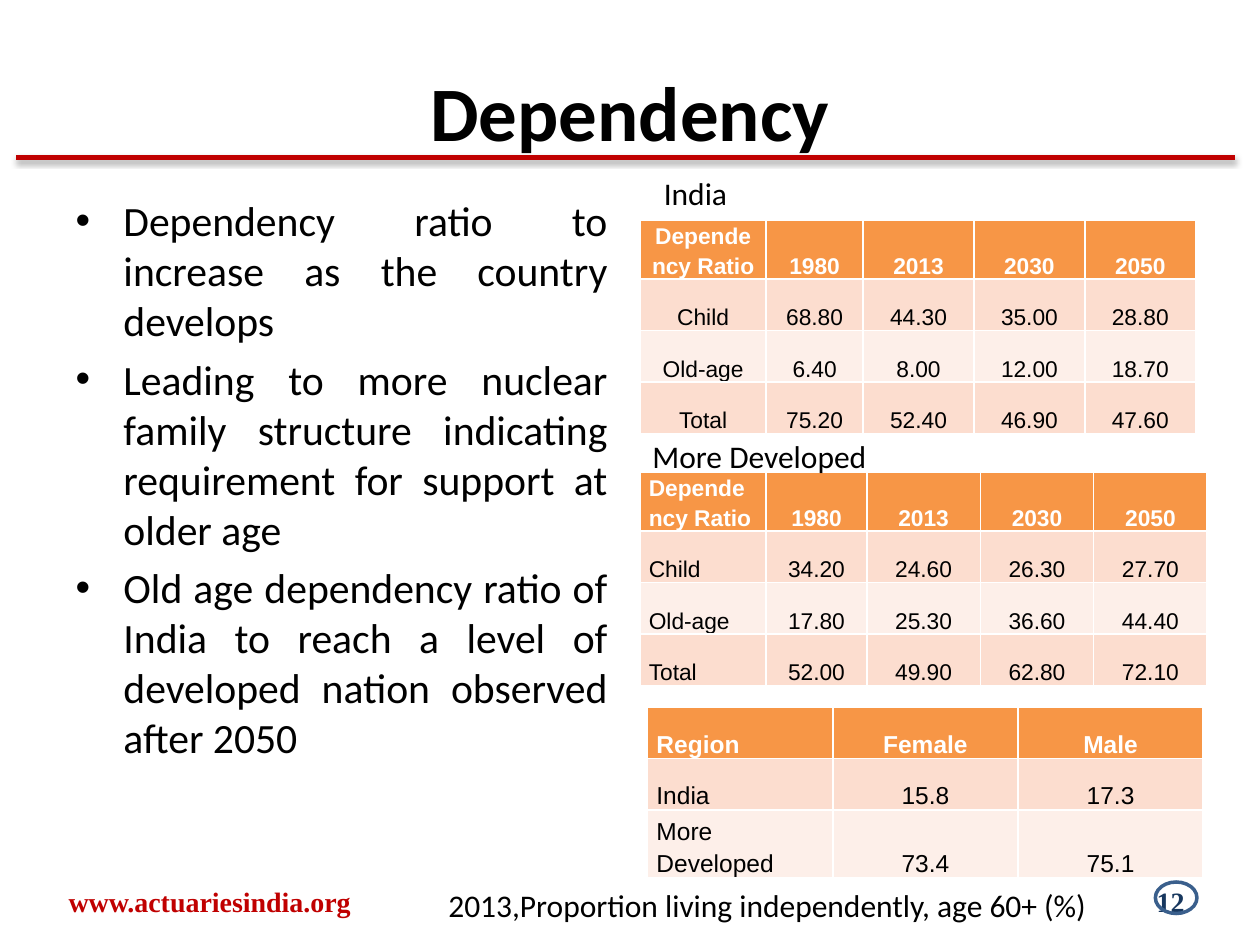
from lxml import etree
from pptx import Presentation
from pptx.dml.color import RGBColor
from pptx.enum.shapes import MSO_CONNECTOR, MSO_SHAPE
from pptx.enum.text import MSO_ANCHOR, MSO_AUTO_SIZE, PP_ALIGN
from pptx.oxml import parse_xml
from pptx.oxml.ns import nsdecls, qn
from pptx.util import Inches, Pt

LEFT, CENTER, RIGHT, JUSTIFY = (
    PP_ALIGN.LEFT, PP_ALIGN.CENTER, PP_ALIGN.RIGHT, PP_ALIGN.JUSTIFY)
TOP, MIDDLE, BOTTOM = MSO_ANCHOR.TOP, MSO_ANCHOR.MIDDLE, MSO_ANCHOR.BOTTOM

BLACK = RGBColor(0x00, 0x00, 0x00)
WHITE = RGBColor(0xFF, 0xFF, 0xFF)
RED = RGBColor(0xC0, 0x00, 0x00)
NAVY = RGBColor(0x17, 0x37, 0x5E)
RING_BLUE = RGBColor(0x3A, 0x5F, 0x8C)
ORANGE = RGBColor(0xF7, 0x96, 0x46)
BANDS = (RGBColor(0xFC, 0xDD, 0xCF), RGBColor(0xFD, 0xEF, 0xE9))

POINTS = [
    "Dependency ratio to increase as the country develops",
    "Leading to more nuclear family structure indicating requirement "
    "for support at older age",
    "Old age dependency ratio of India to reach a level of developed nation "
    "observed after 2050",
]
RATIO_HEADER = ["Dependency Ratio", "1980", "2013", "2030", "2050"]
INDIA_RATIOS = [
    RATIO_HEADER,
    ["Child", "68.80", "44.30", "35.00", "28.80"],
    ["Old-age", "6.40", "8.00", "12.00", "18.70"],
    ["Total", "75.20", "52.40", "46.90", "47.60"],
]
DEVELOPED_RATIOS = [
    RATIO_HEADER,
    ["Child", "34.20", "24.60", "26.30", "27.70"],
    ["Old-age", "17.80", "25.30", "36.60", "44.40"],
    ["Total", "52.00", "49.90", "62.80", "72.10"],
]
LIVING_ALONE = [
    ["Region", "Female", "Male"],
    ["India", "15.8", "17.3"],
    ["More Developed", "73.4", "75.1"],
]


def inches(*lengths):
    return [Inches(length) for length in lengths]


def write(paragraph, text, size=18, font="Calibri", color=BLACK, bold=False,
          align=LEFT, spacing=None):
    paragraph.alignment = align
    if spacing:
        paragraph.line_spacing = spacing
    run = paragraph.add_run()
    run.text = text
    run.font.size = Pt(size)
    run.font.name = font
    run.font.bold = bold
    run.font.color.rgb = color


def place(placeholder, box):
    placeholder.left, placeholder.top, placeholder.width, placeholder.height = inches(*box)
    placeholder.text_frame.auto_size = MSO_AUTO_SIZE.NONE
    return placeholder.text_frame


def add_label(slide, box, text, anchor=TOP, **text_format):
    frame = slide.shapes.add_textbox(*inches(*box)).text_frame
    frame.word_wrap = True
    frame.vertical_anchor = anchor
    write(frame.paragraphs[0], text, **text_format)


def add_title(slide, box, text):
    frame = place(slide.shapes.title, box)
    frame.vertical_anchor = MIDDLE
    write(frame.paragraphs[0], text, size=44, bold=True, align=CENTER)


def add_rule(slide, left, right, y):
    rule = slide.shapes.add_connector(
        MSO_CONNECTOR.STRAIGHT, *inches(left, y, right, y))
    rule.line.color.rgb = RED
    rule.line.width = Pt(3)
    rule._element.spPr.append(parse_xml(
        f'<a:effectLst {nsdecls("a")}>'
        f'<a:outerShdw blurRad="{Pt(3.1)}" dist="{Pt(1.6)}" dir="5400000" rotWithShape="0">'
        '<a:srgbClr val="000000"><a:alpha val="38000"/></a:srgbClr>'
        '</a:outerShdw></a:effectLst>'))


def add_points(slide, box, points):
    frame = place(slide.placeholders[1], box)
    for i, point in enumerate(points):
        paragraph = frame.paragraphs[0] if i == 0 else frame.add_paragraph()
        properties = paragraph._p.get_or_add_pPr()
        properties.set("marL", str(Inches(0.38)))
        properties.set("indent", str(Inches(-0.38)))
        etree.SubElement(properties, qn("a:buChar"), char="•")
        paragraph.space_before = Pt(4.76 if i else 0)
        write(paragraph, point, size=23.8, align=JUSTIFY)


def add_banded_table(slide, left, top, widths, rows, size=13, first_align=LEFT,
                     header_height=0.46, last_height=0.41):
    heights = [header_height] + [0.41] * (len(rows) - 2) + [last_height]
    table = slide.shapes.add_table(
        len(rows), len(widths),
        *inches(left, top, sum(widths), sum(heights))).table
    for column, width in zip(table.columns, widths):
        column.width = Inches(width)
    for r, (row, height) in enumerate(zip(rows, heights)):
        table.rows[r].height = Inches(height)
        header = r == 0
        for c, text in enumerate(row):
            cell = table.cell(r, c)
            cell.fill.solid()
            cell.fill.fore_color.rgb = ORANGE if header else BANDS[(r - 1) % 2]
            cell.vertical_anchor = BOTTOM
            cell.margin_left = cell.margin_right = Inches(0.07)
            cell.margin_top = cell.margin_bottom = 0
            write(cell.text_frame.paragraphs[0], text, size=size, font="Arial",
                  color=WHITE if header else BLACK, bold=header,
                  align=CENTER if c else first_align, spacing=1.15)


def add_footer(slide, top):
    footer_format = dict(anchor=MIDDLE, size=16, font="Times New Roman", bold=True)
    add_label(slide, (0.08, top, 3.17, 0.4), "www.actuariesindia.org",
              color=RED, align=CENTER, **footer_format)
    add_label(slide, (7.17, top, 2.33, 0.4), "12",
              color=NAVY, align=RIGHT, **footer_format)
    # Ring around the page number
    ring = slide.shapes.add_shape(
        MSO_SHAPE.OVAL, *inches(9.17, top + 0.05, 0.33, 0.25))
    ring.shadow.inherit = False
    ring.fill.background()
    ring.line.color.rgb = RING_BLUE
    ring.line.width = Pt(2)


def main():
    deck = Presentation()
    deck.slide_width, deck.slide_height = inches(10, 7.5)
    slide = deck.slides.add_slide(deck.slide_layouts[1])

    # Heading and argument
    add_rule(slide, 0.13, 9.8, 1.25)
    add_title(slide, (0.5, 0.25, 9, 1.25), "Dependency")
    add_points(slide, (0.5, 1.5, 4.42, 3.92), POINTS)

    # Dependency ratios
    add_banded_table(slide, 5.08, 1.75, [1, 0.77] + [0.88] * 3, INDIA_RATIOS,
                     first_align=CENTER)
    add_banded_table(slide, 5.08, 3.75, [1, 0.8] + [0.9] * 3, DEVELOPED_RATIOS)
    add_label(slide, (5.17, 1.33, 1.58, 0.4), "India")
    add_label(slide, (5.08, 3.42, 2.17, 0.4), "More Developed")

    # Independent living
    add_banded_table(slide, 5.14, 5.61, [1.47] * 3, LIVING_ALONE, size=14,
                     header_height=0.41, last_height=0.52)
    add_label(slide, (3.46, 6.98, 5.42, 0.4),
              "2013,Proportion living independently, age 60+ (%)")

    add_footer(slide, 6.95)
    deck.save("out.pptx")


if __name__ == "__main__":
    main()
